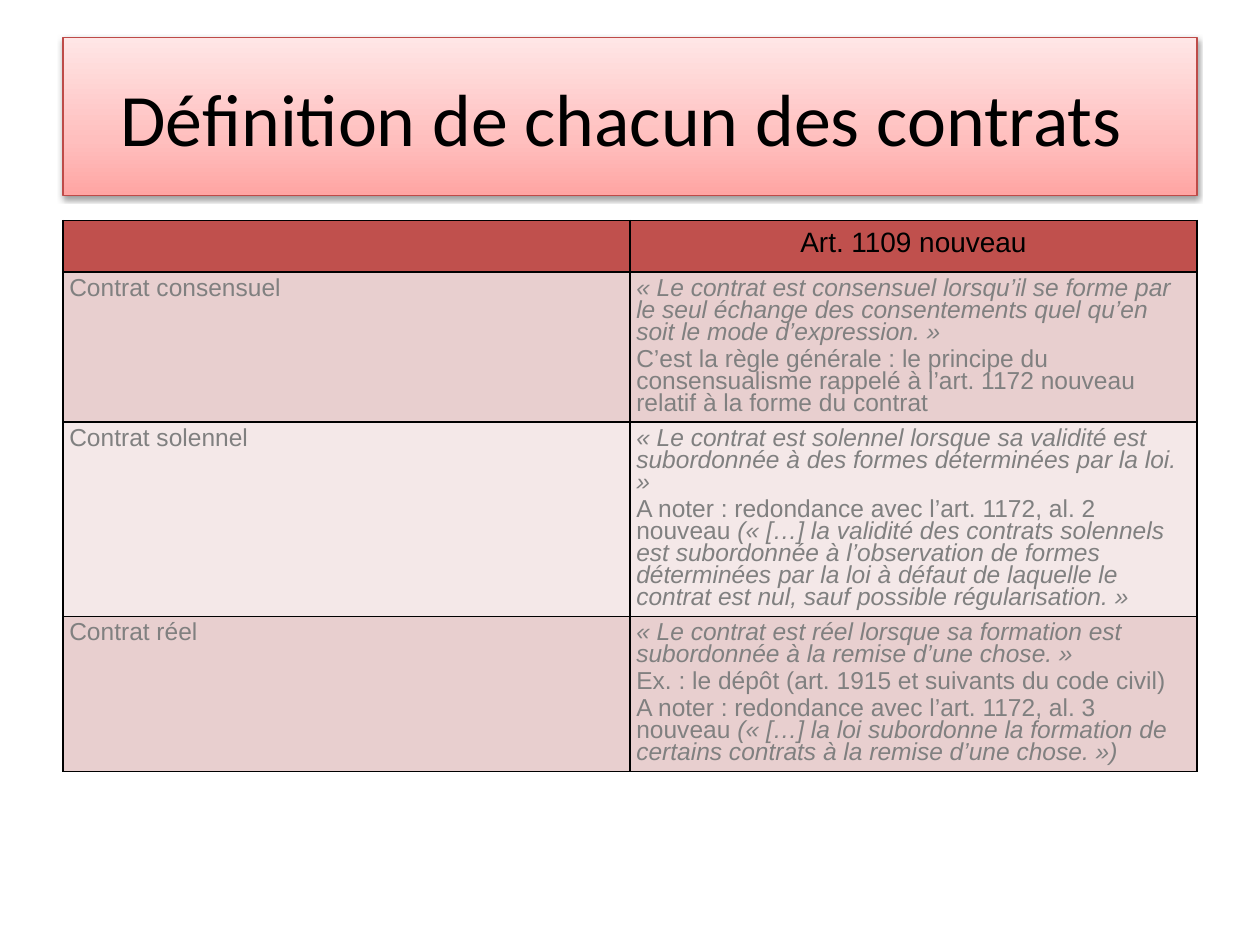
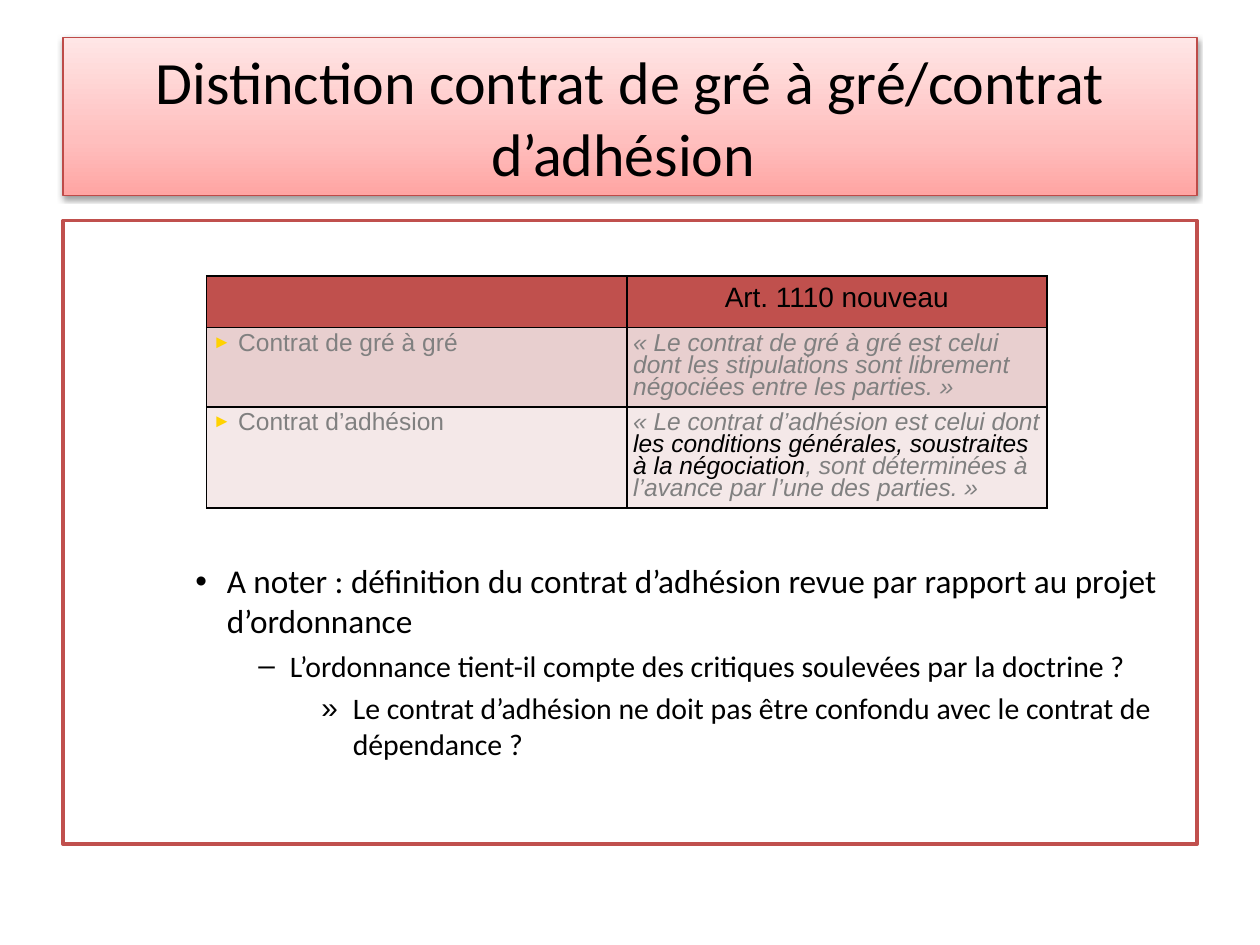
from copy import deepcopy

from lxml import etree
from pptx import Presentation
from pptx import oxml
from pptx.dml.color import RGBColor
from pptx.enum import text
from pptx.enum import shapes
from pptx.oxml.ns import nsdecls, qn
from pptx.util import Inches, Pt


class Theme:
    black = RGBColor.from_string("000000")
    grey = RGBColor.from_string("808080")
    white = RGBColor.from_string("FFFFFF")
    red = RGBColor.from_string("C0504D")
    title_line = RGBColor.from_string("BE4B48")
    title_stops = [(0, "FFA5A3"), (0.35, "FFBFBE"), (1, "FFE6E6")]
    row_tints = [RGBColor.from_string("E8CFCF"), RGBColor.from_string("F4E8E8")]
    arrow_bullet = "FFD200"
    title_font = "Calibri"
    table_font = "Arial"
    header_size = 16
    cell_size = 14
    inset = Inches(0.05)
    left, width = Inches(0.5), Inches(9)


SHADOW = (
    f'<a:effectLst {nsdecls("a")}><a:outerShdw blurRad="38100" dist="20320" dir="5400000" '
    'rotWithShape="0"><a:srgbClr val="000000"><a:alpha val="38000"/></a:srgbClr>'
    "</a:outerShdw></a:effectLst>"
)
BORDER = (
    '<a:{side} {ns} w="12700"><a:solidFill><a:srgbClr val="000000"/></a:solidFill></a:{side}>'
)


def set_bullet(para, char, left, hang, color=None, percent=None):
    """Give the paragraph a bullet and a hanging indent, both in inches."""
    properties = para._p.get_or_add_pPr()
    properties.set("marL", str(Inches(left)))
    properties.set("indent", str(-Inches(hang)))
    if color:
        bullet_color = etree.SubElement(properties, qn("a:buClr"))
        etree.SubElement(bullet_color, qn("a:srgbClr")).set("val", color)
    if percent:
        etree.SubElement(properties, qn("a:buSzPct")).set("val", str(percent * 1000))
    etree.SubElement(properties, qn("a:buFont")).set("typeface", Theme.table_font)
    etree.SubElement(properties, qn("a:buChar")).set("char", char)


def add_article_table(page, left, top, width, heights, article, rows, bullet=None):
    """Add a two-column table: contract names, then paragraphs of (style, words) spans."""
    frame = page.shapes.add_table(
        len(heights), 2, Inches(left), Inches(top), Inches(width), Inches(sum(heights))
    )
    table = frame.table
    table.first_row = table.horz_banding = False
    for column in table.columns:
        column.width = Inches(width / 2)
    for row, height in zip(table.rows, heights):
        row.height = Inches(height)

    content = [([], [[("plain", article)]])]
    content += [([[("plain", name)]], definition) for name, definition in rows]
    for row_index, row_content in enumerate(content):
        header = row_index == 0
        for column_index, paragraphs in enumerate(row_content):
            cell = table.cell(row_index, column_index)
            cell.margin_left = cell.margin_right = Theme.inset
            cell.margin_top = cell.margin_bottom = Theme.inset
            cell.fill.solid()
            cell.fill.fore_color.rgb = (
                Theme.red if header else Theme.row_tints[(row_index - 1) % 2]
            )
            for index, side in enumerate(("lnL", "lnR", "lnT", "lnB")):
                border = oxml.parse_xml(BORDER.format(side=side, ns=nsdecls("a")))
                cell._tc.get_or_add_tcPr().insert(index, border)

            for index, spans in enumerate(paragraphs):
                body = cell.text_frame
                para = body.add_paragraph() if index else body.paragraphs[0]
                para.space_before = Pt(3)
                if header:
                    para.alignment = text.PP_ALIGN.CENTER
                else:
                    para.line_spacing = 0.8
                    if bullet and column_index == 0:
                        set_bullet(para, bullet, 0.2, 0.2, Theme.arrow_bullet, 75)
                for style, words in spans:
                    span = para.add_run()
                    span.text = words
                    span.font.name = Theme.table_font
                    span.font.size = Pt(Theme.header_size if header else Theme.cell_size)
                    span.font.bold = False
                    span.font.italic = style != "plain"
                    span.font.color.rgb = (
                        Theme.black if header or style == "key" else Theme.grey
                    )


deck = Presentation()
deck.slide_width, deck.slide_height = Inches(10), Inches(7.5)

# Titles
titles = [
    ("Définition de chacun des contrats ", 42.2),
    ("Distinction contrat de gré à gré/contrat d’adhésion ", 34.3),
]
pages = []
for words, size in titles:
    page = deck.slides.add_slide(deck.slide_layouts[5])
    pages.append(page)
    title = page.shapes.title
    title.left, title.top = Theme.left, Inches(0.3)
    title.width, title.height = Theme.width, Inches(1.25)

    title.fill.gradient()
    stop_list = title._element.spPr.find(".//" + qn("a:gsLst"))
    stop_list.insert(1, deepcopy(stop_list[0]))
    for stop, (position, color) in zip(title.fill.gradient_stops, Theme.title_stops):
        stop.position = position
        stop.color.rgb = RGBColor.from_string(color)
    title.fill.gradient_angle = 90
    title.line.color.rgb = Theme.title_line
    title.line.width = Pt(0.75)
    title._element.spPr.append(oxml.parse_xml(SHADOW))

    frame = title.text_frame
    frame.text = words
    frame.word_wrap = True
    frame.auto_size = text.MSO_AUTO_SIZE.NONE
    frame.vertical_anchor = text.MSO_ANCHOR.MIDDLE
    frame.margin_left = frame.margin_right = Theme.inset
    frame.margin_top = frame.margin_bottom = Theme.inset
    para = frame.paragraphs[0]
    para.alignment = text.PP_ALIGN.CENTER
    font = para.runs[0].font
    font.name, font.size = Theme.title_font, Pt(size)
    font.color.rgb = Theme.black

definition_page, distinction_page = pages

# Definitions of the contracts
add_article_table(
    definition_page, 0.5, 1.75, 9, [0.41, 1.19, 1.54, 1.23], "Art. 1109 nouveau",
    [
        ("Contrat consensuel", [
            [("quote", "« Le contrat est consensuel lorsqu’il se forme par le seul échange "
                       "des consentements quel qu’en soit le mode d’expression. »")],
            [("plain", "C’est la règle générale : le principe du consensualisme rappelé à "
                       "l’art. 1172 nouveau relatif à la forme du contrat")],
        ]),
        ("Contrat solennel", [
            [("quote", "« Le contrat est solennel lorsque sa validité est subordonnée à des "
                       "formes déterminées par la loi. »")],
            [("plain", "A noter : redondance avec l’art. 1172, al. 2 nouveau "),
             ("quote", "(« […] la validité des contrats solennels est subordonnée à "
                       "l’observation de formes déterminées par la loi à défaut de laquelle "
                       "le contrat est nul, sauf possible régularisation. »")],
        ]),
        ("Contrat réel", [
            [("quote", "« Le contrat est réel lorsque sa formation est subordonnée à la "
                       "remise d’une chose. »")],
            [("plain", "Ex. : le dépôt (art. 1915 et suivants du code civil)")],
            [("plain", "A noter : redondance avec l’art. 1172, al. 3 nouveau "),
             ("quote", "(« […] la loi subordonne la formation de certains contrats à la "
                       "remise d’une chose. »)")],
        ]),
    ],
)

# Framed remarks, below the place of the second table
remarks_box = distinction_page.shapes.add_shape(
    shapes.MSO_SHAPE.RECTANGLE, Theme.left, Inches(1.75), Theme.width, Inches(4.95)
)
remarks_box.shadow.inherit = False
remarks_box.fill.solid()
remarks_box.fill.fore_color.rgb = Theme.white
remarks_box.line.color.rgb = Theme.red
remarks_box.line.width = Pt(2)
frame = remarks_box.text_frame
frame.word_wrap = True
frame.vertical_anchor = text.MSO_ANCHOR.TOP
frame.margin_left = frame.margin_right = frame.margin_bottom = Theme.inset
frame.margin_top = Inches(2.7)
remarks = [
    ("•", 19, "A noter : définition du contrat d’adhésion revue par rapport au projet "
              "d’ordonnance"),
    ("–", 17, "L’ordonnance tient-il compte des critiques soulevées par la doctrine ?"),
    ("»", 17, "Le contrat d’adhésion ne doit pas être confondu avec le contrat de "
              "dépendance ?"),
]
for level, (bullet, size, words) in enumerate(remarks):
    para = frame.add_paragraph() if level else frame.paragraphs[0]
    para.text = words
    para.level = level + 1
    para.alignment = text.PP_ALIGN.LEFT
    para.space_before = Pt(4 if level else 0)
    set_bullet(para, bullet, 1.25 + 0.5 * level, 0.25)
    font = para.runs[0].font
    font.name, font.size = Theme.title_font, Pt(size)
    font.color.rgb = Theme.black

# Negotiated and standard-form contracts
add_article_table(
    distinction_page, 1.64, 2.19, 6.67, [0.41, 0.63, 0.8], "Art. 1110 nouveau",
    [
        ("Contrat de gré à gré", [
            [("quote", "« Le contrat de gré à gré est celui dont les stipulations sont "
                       "librement négociées entre les parties. »")],
        ]),
        ("Contrat d’adhésion", [
            [("quote", "« Le contrat d’adhésion est celui dont "),
             ("key", "les conditions générales, soustraites à la négociation"),
             ("quote", ", sont déterminées à l’avance par l’une des parties. »")],
        ]),
    ],
    bullet="►",
)

deck.save("out.pptx")
